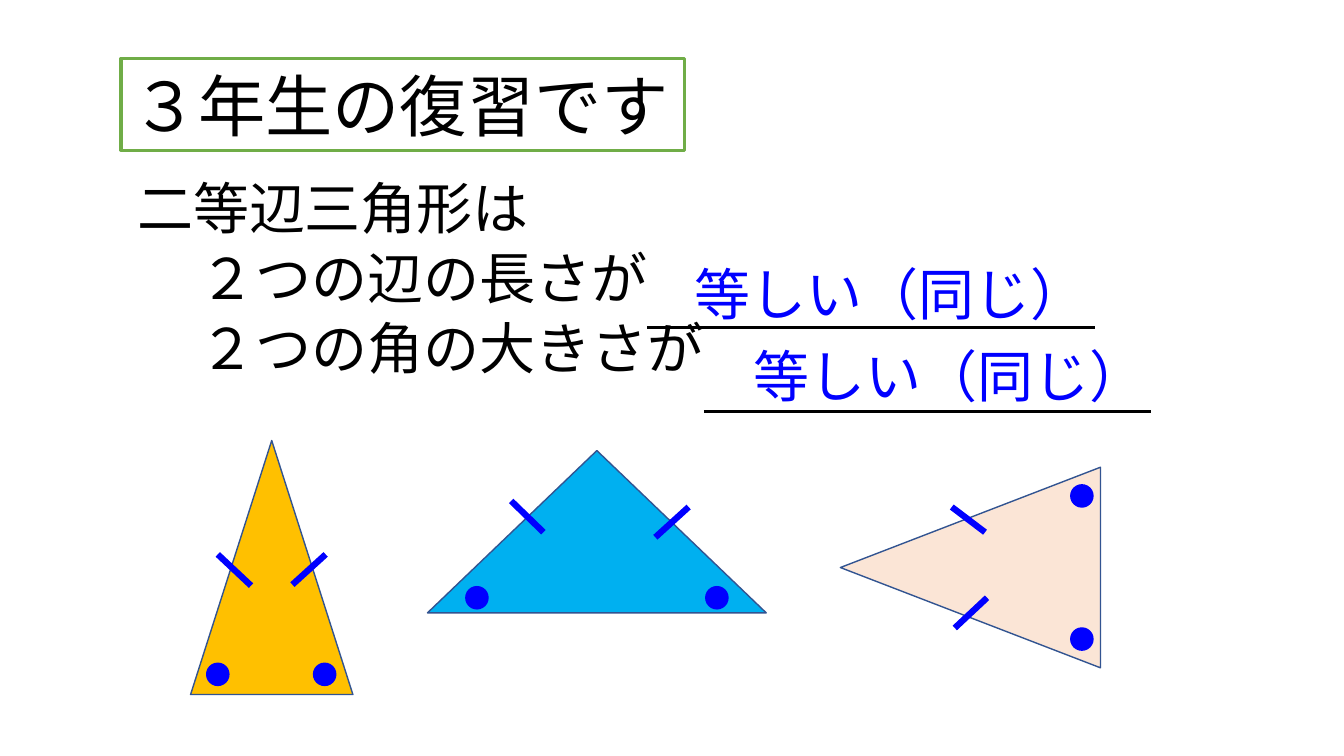
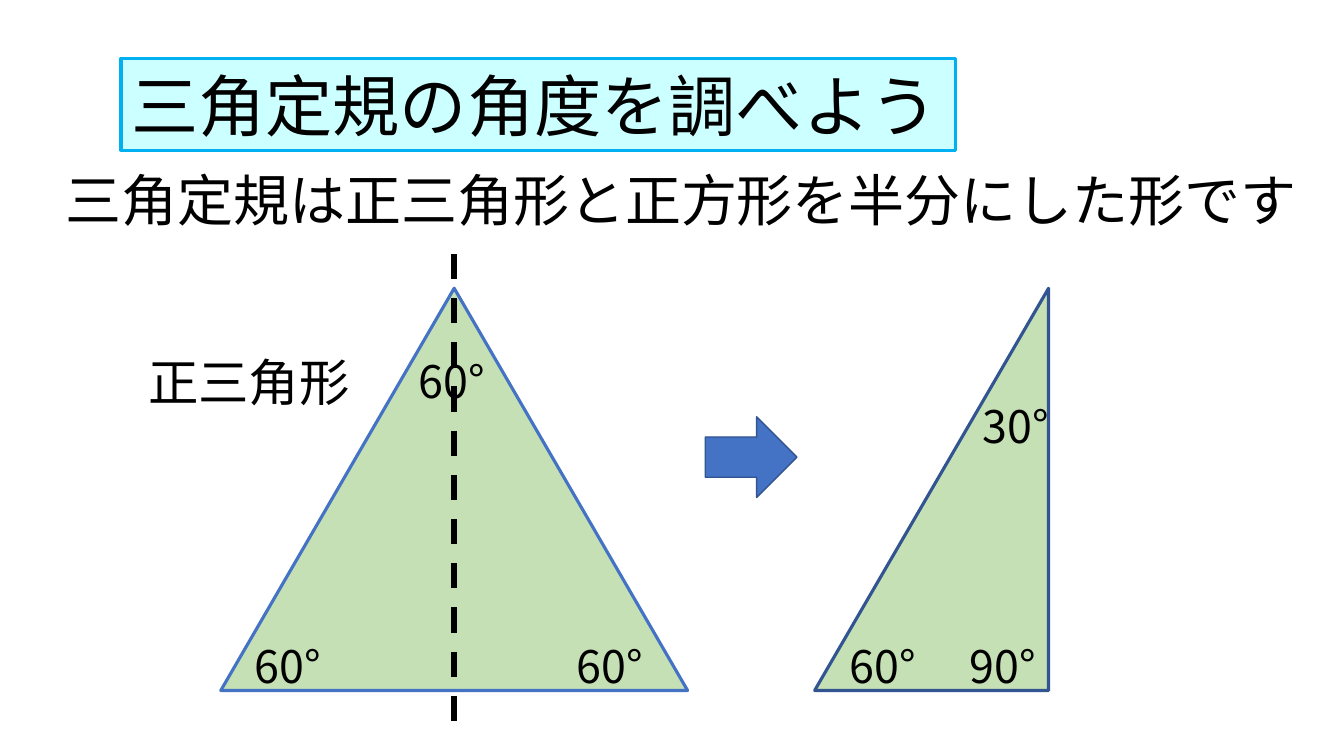
from pptx import Presentation
from pptx.dml.color import RGBColor
from pptx.enum.dml import MSO_LINE
from pptx.enum.shapes import MSO_CONNECTOR, MSO_SHAPE as SHAPE
from pptx.enum.text import MSO_ANCHOR as ANCHOR, MSO_AUTO_SIZE as AUTO_SIZE, PP_ALIGN as ALIGN
from pptx.oxml.ns import qn
from pptx.util import Pt
from lxml.etree import SubElement

PX = 9144
FONT = "Noto Sans CJK JP"
BLACK, BLUE, OUTLINE = "000000", "0000FF", "325491"
GREEN, SKY, ACCENT = "C5E0B4", "00B0F0", "4472C4"
DOT = 22
INDENT = 62


def px(*lengths):
    """Turn pixel lengths into EMU."""
    return [length * PX for length in lengths]


def color(hex_string):
    """Turn a hex string into a colour."""
    return RGBColor.from_string(hex_string)


def place(shape, box):
    """Move and size a shape."""
    shape.left, shape.top, shape.width, shape.height = px(*box)


def paint(shape, fill, line, weight):
    """Give a shape its fill and outline."""
    if fill:
        shape.fill.solid()
        shape.fill.fore_color.rgb = color(fill)
    else:
        shape.fill.background()
    shape.line.color.rgb = color(line)
    shape.line.width = Pt(weight)


def prepare_frame(shape, anchor=ANCHOR.MIDDLE):
    """Set the common frame options and return the text frame."""
    frame = shape.text_frame
    frame.word_wrap = True
    frame.auto_size = AUTO_SIZE.NONE
    frame.vertical_anchor = anchor
    return frame


def write(paragraph, text, size=40, font_color=BLACK, before=0):
    """Write one formatted line into a paragraph."""
    paragraph.alignment = ALIGN.LEFT
    paragraph.line_spacing = 1.0
    paragraph.space_before = Pt(before)
    run = paragraph.add_run()
    run.text = text
    run.font.size = Pt(size)
    run.font.name = FONT
    run.font.color.rgb = color(font_color)
    SubElement(run.font._element, qn("a:ea"), typeface=FONT)


def set_title(slide, text, width, line, fill=None):
    """Fill the framed title placeholder."""
    title = slide.shapes.title
    place(title, (120, 58, width, 91))
    paint(title, fill, line, 2.25)
    write(prepare_frame(title).paragraphs[0], text, size=48)


def set_body(slide, box, first, *indented):
    """Fill the body placeholder with a lead line and indented lines."""
    body = slide.placeholders[1]
    place(body, box)
    frame = prepare_frame(body, ANCHOR.TOP)
    for number, text in enumerate((first, *indented)):
        paragraph = frame.add_paragraph() if number else frame.paragraphs[0]
        properties = paragraph._p.get_or_add_pPr()
        properties.set("marL", str(INDENT * PX if number else 0))
        properties.set("indent", "0")
        SubElement(properties, qn("a:buNone"))
        write(paragraph, text, before=2 if number else 0)


def add_text(slide, text, box, **text_format):
    """Add a text box with one line."""
    text_box = slide.shapes.add_textbox(*px(*box))
    write(prepare_frame(text_box).paragraphs[0], text, **text_format)


def add_figure(slide, kind, box, fill, line=OUTLINE, weight=1, rotation=0, flip=False):
    """Add a filled preset shape."""
    shape = slide.shapes.add_shape(kind, *px(*box))
    shape.shadow.inherit = False
    shape.rotation = rotation
    if flip:
        shape._element.spPr.xfrm.set("flipH", "1")
    paint(shape, fill, line, weight)


def add_line(slide, ends, line=BLACK, weight=4.5, dash=None):
    """Add a straight line between two points."""
    connector = slide.shapes.add_connector(MSO_CONNECTOR.STRAIGHT, *px(*ends))
    connector.line.color.rgb = color(line)
    connector.line.width = Pt(weight)
    if dash:
        connector.line.dash_style = dash
    SubElement(connector._element.spPr, qn("a:effectLst"))


def build_review(slide):
    """Build the review of isosceles triangles."""
    set_title(slide, "３年生の復習です", 559, "70AD47")
    set_body(slide, (126, 167, 600, 260),
             "二等辺三角形は", "２つの辺の長さが", "２つの角の大きさが")
    for answer_left, answer_top, blank_left, blank_top in (
            (679, 252, 642, 325), (738, 334, 698, 408)):
        add_line(slide, (blank_left, blank_top, blank_left + 444, blank_top), weight=2)
        add_text(slide, "等しい（同じ）", (answer_left, answer_top, 413, 77), font_color=BLUE)
    for box, fill, rotation in (
            ((189, 437, 161, 252), "FFC000", 0),
            ((424, 447, 336, 161), SKY, 0),
            ((863, 434, 199, 258), "FBE5D6", 270)):
        add_figure(slide, SHAPE.ISOSCELES_TRIANGLE, box, fill, rotation=rotation)
    for side_mark in (
            (216, 550, 249, 581), (290, 580, 323, 550),
            (650, 533, 683, 503), (507, 497, 539, 528),
            (944, 503, 977, 528), (947, 623, 979, 593)):
        add_line(slide, side_mark, BLUE)
    for left, top in ((205, 658), (311, 658), (462, 582), (700, 582), (1062, 481), (1062, 623)):
        add_figure(slide, SHAPE.OVAL, (left, top, DOT, DOT), BLUE, BLUE)


def build_set_square(slide):
    """Build the halving of an equilateral triangle."""
    set_title(slide, "三角定規の角度を調べよう", 828, SKY, "CCFFFF")
    set_body(slide, (55, 159, 1254, 91), "三角定規は正三角形と正方形を半分にした形です")
    add_figure(slide, SHAPE.ISOSCELES_TRIANGLE, (219, 286, 463, 399), GREEN, ACCENT, 2.25)
    add_text(slide, "正三角形", (137, 343, 222, 71), size=36)
    add_line(slide, (450, 252, 450, 727), dash=MSO_LINE.DASH)
    add_figure(slide, SHAPE.RIGHT_TRIANGLE, (808, 286, 232, 399), GREEN, weight=2.25, flip=True)
    add_figure(slide, SHAPE.DOWN_ARROW, (705, 408, 80, 91), ACCENT, rotation=270)
    for angle, left, top in (
            ("60°", 833, 628), ("30°", 965, 390), ("90°", 952, 628),
            ("60°", 243, 628), ("60°", 562, 628), ("60°", 405, 346)):
        add_text(slide, angle, (left, top, 129, 64), size=32)


def main():
    """Build and save the presentation."""
    presentation = Presentation()
    presentation.slide_width, presentation.slide_height = px(1333, 750)
    layout = presentation.slide_layouts[1]
    for build in (build_review, build_set_square):
        build(presentation.slides.add_slide(layout))
    presentation.save("out.pptx")


if __name__ == "__main__":
    main()
